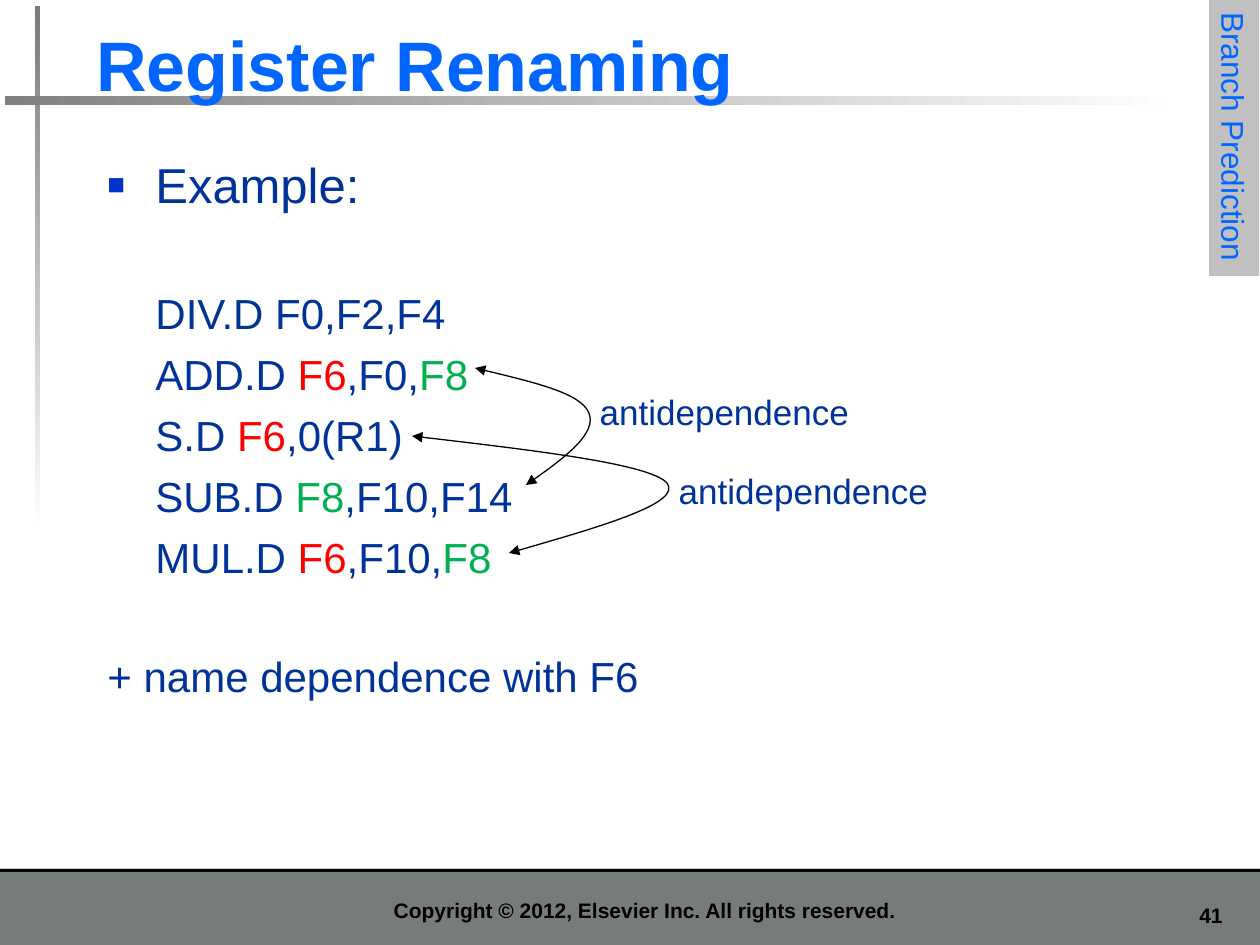
import lxml.etree
import pptx
import pptx.dml.color
import pptx.enum.shapes
import pptx.enum.text
import pptx.oxml.ns
import pptx.util

RGBColor = pptx.dml.color.RGBColor
Align = pptx.enum.text.PP_ALIGN
Anchor = pptx.enum.text.MSO_ANCHOR
qn = pptx.oxml.ns.qn

BLACK = RGBColor(0x00, 0x00, 0x00)
WHITE = RGBColor(0xFF, 0xFF, 0xFF)
FOOTER_GRAY = RGBColor(0x76, 0x7D, 0x79)
RULE_GRAY = RGBColor(0x80, 0x80, 0x80)
TAB_GRAY = RGBColor(0xC0, 0xC0, 0xC0)
TITLE_BLUE = RGBColor(0x00, 0x66, 0xFF)
TEXT_BLUE = RGBColor(0x00, 0x33, 0x99)
BULLET_BLUE = RGBColor(0x00, 0x33, 0xCC)
RED = RGBColor(0xFF, 0x00, 0x00)
GREEN = RGBColor(0x00, 0xB0, 0x50)

PX_PER_INCH = 126
REGISTER_COLORS = {"F6": RED, "F8": GREEN}
INSTRUCTIONS = [
    ["DIV.D F0,F2,F4"],
    ["ADD.D ", "F6", ",F0,", "F8"],
    ["S.D ", "F6", ",0(R1)"],
    ["SUB.D ", "F8", ",F10,F14"],
    ["MUL.D ", "F6", ",F10,", "F8"],
]


def px(length):
    return pptx.util.Emu(round(length * 914400 / PX_PER_INCH))


class SlideBuilder:
    font_name = "Arial"

    def __init__(self, slide):
        self.slide = slide

    def rectangle(self, left, top, width, height, color):
        shape = self.slide.shapes.add_shape(
            pptx.enum.shapes.MSO_SHAPE.RECTANGLE,
            px(left), px(top), px(width), px(height))
        shape.shadow.inherit = False
        shape.fill.solid()
        shape.fill.fore_color.rgb = color
        shape.line.fill.background()
        return shape

    def fading_rule(self, left, top, width, height, color, angle):
        shape = self.rectangle(left, top, width, height, color)
        shape.fill.gradient()
        shape.fill.gradient_angle = angle
        for stop, stop_color in zip(shape.fill.gradient_stops, (color, WHITE)):
            stop.color.rgb = stop_color

    def text_box(self, left, top, width, height, anchor=Anchor.TOP):
        box = self.slide.shapes.add_textbox(px(left), px(top), px(width), px(height))
        box.text_frame.word_wrap = True
        box.text_frame.vertical_anchor = anchor
        return box.text_frame

    def style(self, paragraph, size, color, bold=False, align=Align.LEFT):
        paragraph.alignment = align
        font = paragraph.font
        font.name = self.font_name
        font.size = pptx.util.Pt(size)
        font.bold = bold
        font.color.rgb = color

    def label(self, frame, text, size, color, bold=False, align=Align.LEFT):
        paragraph = frame.paragraphs[0]
        paragraph.text = text
        self.style(paragraph, size, color, bold, align)

    def line_of_code(self, frame, parts, space_before, indent):
        """Add one paragraph, colouring the registers that matter."""
        paragraph = frame.add_paragraph()
        paragraph.space_before = pptx.util.Pt(space_before)
        paragraph._p.get_or_add_pPr().set("marL", str(px(indent)))
        self.style(paragraph, 24, TEXT_BLUE)
        for part in parts:
            run = paragraph.add_run()
            run.text = part
            if part in REGISTER_COLORS:
                run.font.color.rgb = REGISTER_COLORS[part]

    def bullet(self, paragraph, indent):
        properties = paragraph._p.get_or_add_pPr()
        properties.set("marL", str(px(indent)))
        properties.set("indent", str(-px(indent)))
        color = lxml.etree.SubElement(properties, qn("a:buClr"))
        lxml.etree.SubElement(color, qn("a:srgbClr"), val=str(BULLET_BLUE))
        lxml.etree.SubElement(properties, qn("a:buSzPct"), val="60000")
        lxml.etree.SubElement(properties, qn("a:buFont"), typeface=self.font_name)
        lxml.etree.SubElement(properties, qn("a:buChar"), char="■")

    def double_arrow(self, start, *points):
        """Draw cubic curves, three points each, with an arrowhead at both ends."""
        builder = self.slide.shapes.build_freeform(px(start[0]), px(start[1]))
        builder.add_line_segments([(px(x), px(y)) for x, y in points], close=False)
        shape = builder.convert_to_shape()
        shape.shadow.inherit = False
        shape.fill.background()
        shape.line.color.rgb = BLACK
        shape.line.width = pptx.util.Pt(0.75)

        properties = shape.element.spPr
        outline = properties.find(qn("a:ln"))
        for end in ("a:headEnd", "a:tailEnd"):
            lxml.etree.SubElement(outline, qn(end), type="triangle")
        path = properties.find(".//" + qn("a:path"))
        segments = path.findall(qn("a:lnTo"))
        for first in range(0, len(segments), 3):
            curve = lxml.etree.SubElement(path, qn("a:cubicBezTo"))
            for segment in segments[first:first + 3]:
                curve.append(segment[0])
                path.remove(segment)


def main():
    presentation = pptx.Presentation()
    presentation.slide_width = px(1260)
    presentation.slide_height = px(945)
    builder = SlideBuilder(presentation.slides.add_slide(presentation.slide_layouts[6]))

    builder.rectangle(0, 869, 1260, 76, FOOTER_GRAY)
    builder.rectangle(0, 869, 1260, 3, BLACK)
    builder.label(builder.text_box(1155, 896, 80, 38), "41", 12, BLACK, True, Align.RIGHT)
    builder.fading_rule(35, 6, 5, 525, FOOTER_GRAY, 270)
    builder.fading_rule(5, 96, 1181, 9, RULE_GRAY, 0)
    builder.label(builder.text_box(144, 879, 1002, 50, Anchor.BOTTOM),
                  "Copyright © 2012, Elsevier Inc. All rights reserved.",
                  12, BLACK, True, Align.CENTER)
    builder.label(builder.text_box(84, 15, 1142, 97, Anchor.BOTTOM),
                  "Register Renaming", 40, TITLE_BLUE, True)

    body = builder.text_box(95, 155, 1140, 704)
    heading = body.paragraphs[0]
    builder.bullet(heading, 48)
    builder.label(body, "Example:", 28, TEXT_BLUE)
    heading.line_spacing = 0.9
    for index, parts in enumerate(INSTRUCTIONS):
        builder.line_of_code(body, parts, 6 if index else 42, 48)
    builder.line_of_code(body, ["+ name dependence with F6"], 39.5, 0)

    section = builder.rectangle(1096, 113, 276, 50, TAB_GRAY)
    section.rotation = 90
    section.text_frame.word_wrap = False
    section.text_frame.vertical_anchor = Anchor.TOP
    builder.label(section.text_frame, "Branch Prediction", 18, TITLE_BLUE)

    builder.double_arrow((475, 368), (528, 381), (581, 393), (589, 413),
                         (597, 433), (562, 460), (526, 485))
    builder.double_arrow((412, 436), (531, 450), (650, 464), (667, 483),
                         (683, 503), (596, 528), (509, 553))
    for left, top in ((581, 384), (660, 463)):
        builder.label(builder.text_box(left, top, 287, 55),
                      "antidependence", 20, TEXT_BLUE, align=Align.CENTER)

    presentation.save("out.pptx")


if __name__ == "__main__":
    main()
